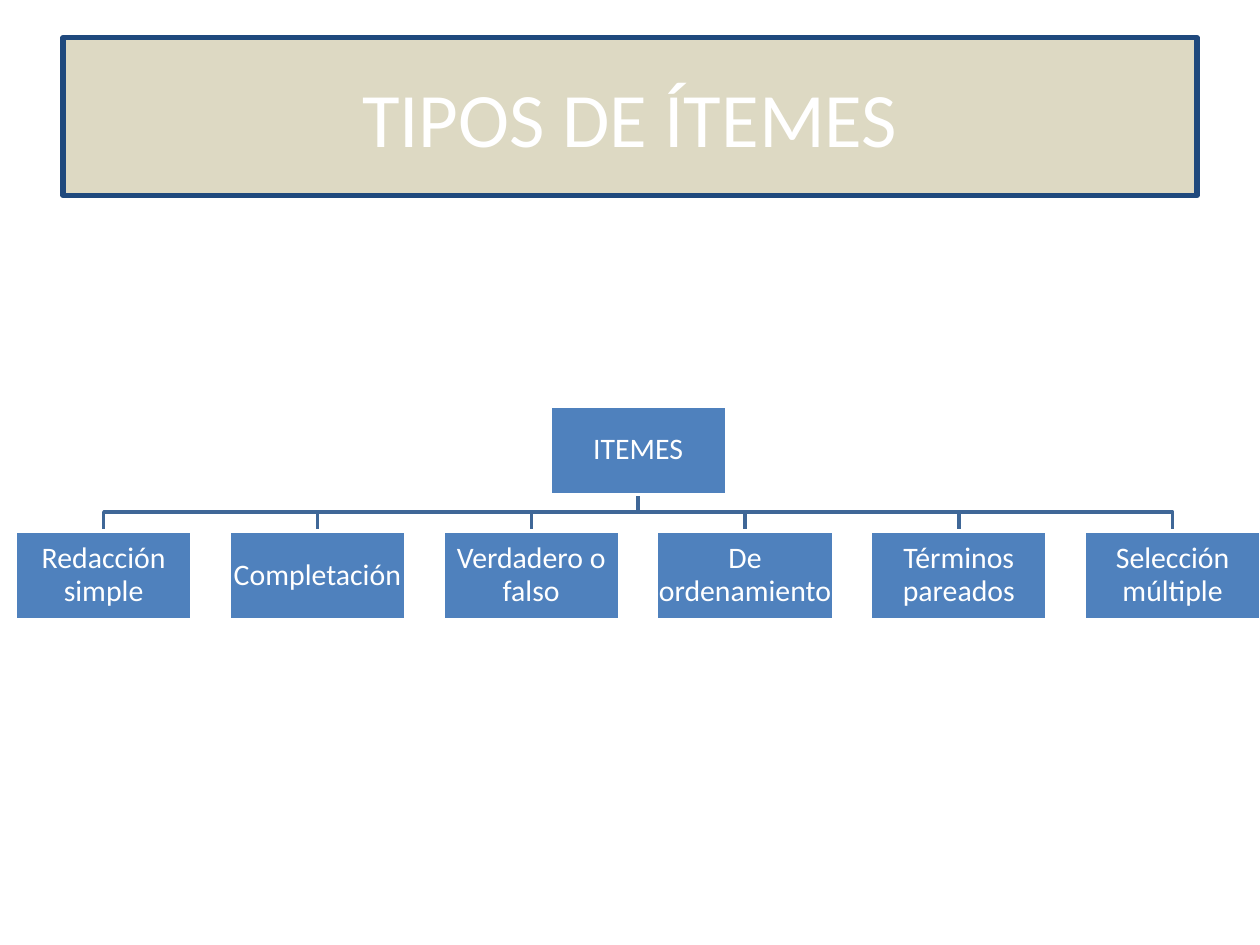
from dataclasses import dataclass

from pptx import Presentation
from pptx.dml.color import RGBColor
from pptx.enum.shapes import MSO_SHAPE
from pptx.enum.text import MSO_ANCHOR as Anchor, PP_ALIGN as Align
from pptx.util import Cm, Pt

WHITE, SAND, NAVY = "FFFFFF", "DDD9C3", "1F497D"
BLUE, LINK_BLUE = "4F81BD", "3F6797"

BOX_W, BOX_H = 3.56, 1.78
FIRST_LEFT, PITCH = 0.31, 4.31
ROOT_TOP, TYPES_TOP = 8.19, 10.71
BRANCH_Y = 10.32
ITEM_TYPES = [
    "Redacción simple",
    "Completación",
    "Verdadero o falso",
    "De ordenamiento",
    "Términos pareados",
    "Selección múltiple",
]


@dataclass
class Node:
    """One box of the chart; lengths in centimetres."""
    label: str
    left: float
    top: float

    @property
    def center(self) -> float:
        return self.left + BOX_W / 2

    @property
    def bottom(self) -> float:
        return self.top + BOX_H


def color(hex_code: str) -> RGBColor:
    return RGBColor.from_string(hex_code)


def paint(shape, fill: str, line: str, width: float) -> None:
    shape.fill.solid()
    shape.fill.fore_color.rgb = color(fill)
    shape.line.color.rgb = color(line)
    shape.line.width = Pt(width)


def write(shape, text: str, size: float) -> None:
    """Put one centred white run into the shape."""
    frame = shape.text_frame
    frame.word_wrap = True
    frame.vertical_anchor = Anchor.MIDDLE
    paragraph = frame.paragraphs[0]
    paragraph.alignment = Align.CENTER
    run = paragraph.add_run()
    run.text = text
    run.font.name = "Calibri"
    run.font.size = Pt(size)
    run.font.color.rgb = color(WHITE)


def draw_title(slide, text: str) -> None:
    title = slide.shapes.title
    title.left, title.top = Cm(1.27), Cm(0.76)
    title.width, title.height = Cm(22.86), Cm(3.18)
    paint(title, SAND, NAVY, 3)
    write(title, text, 44)


def draw_branch(slide, parent: Node, child: Node) -> None:
    """Draw the stepped line from the parent's bottom to the child's top."""
    builder = slide.shapes.build_freeform(Cm(parent.center), Cm(parent.bottom))
    corners = [
        (parent.center, BRANCH_Y),
        (child.center, BRANCH_Y),
        (child.center, child.top),
    ]
    builder.add_line_segments([(Cm(x), Cm(y)) for x, y in corners], close=False)
    branch = builder.convert_to_shape()
    branch.shadow.inherit = False
    branch.fill.background()
    branch.line.color.rgb = color(LINK_BLUE)
    branch.line.width = Pt(2)


def draw_node(slide, node: Node) -> None:
    box = slide.shapes.add_shape(
        MSO_SHAPE.RECTANGLE, Cm(node.left), Cm(node.top), Cm(BOX_W), Cm(BOX_H))
    box.shadow.inherit = False
    paint(box, BLUE, WHITE, 2)
    write(box, node.label, 17)
    frame = box.text_frame
    frame.margin_left = frame.margin_right = Cm(0.02)
    frame.margin_top = frame.margin_bottom = Cm(0.02)
    frame.paragraphs[0].line_spacing = 0.9


def main() -> None:
    deck = Presentation()
    deck.slide_width, deck.slide_height = Cm(25.4), Cm(19.05)
    slide = deck.slides.add_slide(deck.slide_layouts[5])
    draw_title(slide, "TIPOS DE ÍTEMES")

    types = [Node(label, FIRST_LEFT + i * PITCH, TYPES_TOP)
             for i, label in enumerate(ITEM_TYPES)]
    root = Node("ITEMES", (types[0].left + types[-1].left) / 2, ROOT_TOP)
    for item_type in types:
        draw_branch(slide, root, item_type)
    for node in [root, *types]:
        draw_node(slide, node)

    deck.save("out.pptx")


if __name__ == "__main__":
    main()
